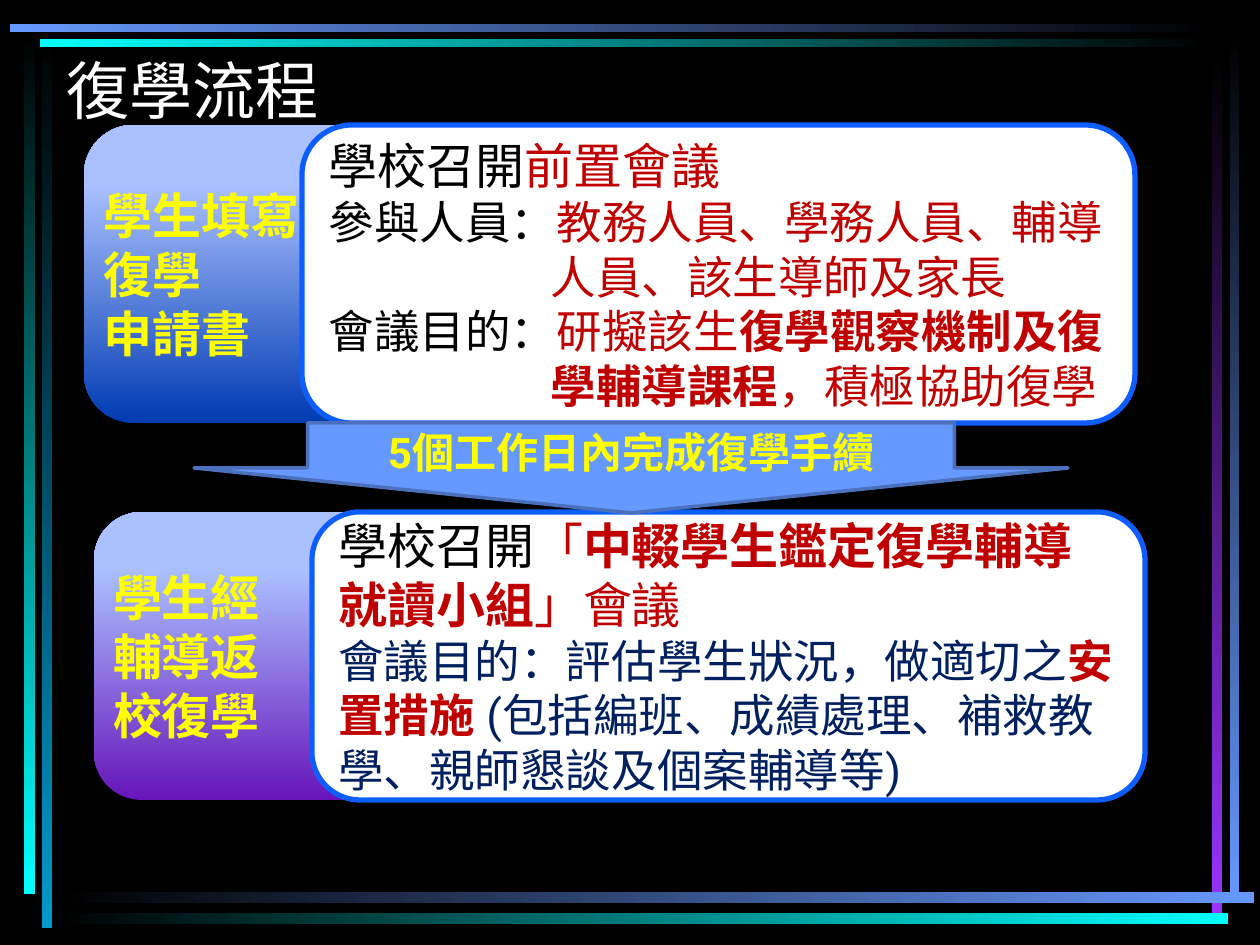
from dataclasses import dataclass

from lxml import etree
from pptx import Presentation
from pptx.dml.color import RGBColor
from pptx.enum.shapes import MSO_SHAPE
from pptx.enum.text import MSO_ANCHOR, PP_ALIGN
from pptx.oxml.ns import qn
from pptx.util import Pt

RECT = MSO_SHAPE.RECTANGLE
ROUNDED = MSO_SHAPE.ROUNDED_RECTANGLE
DOWN_ARROW = MSO_SHAPE.DOWN_ARROW
TOP, MIDDLE = MSO_ANCHOR.TOP, MSO_ANCHOR.MIDDLE
LEFT, CENTER = PP_ALIGN.LEFT, PP_ALIGN.CENTER
RIGHTWARD, UPWARD, DOWNWARD = 0, 90, 270


def px(length):
    return round(length * 914400 / 126)


@dataclass(frozen=True)
class Theme:
    font: str = "Roboto"
    black: str = "000000"
    white: str = "FFFFFF"
    yellow: str = "FFFF00"
    red: str = "C00000"
    navy: str = "002060"
    sky: str = "6699FF"
    aqua: str = "00FFFF"
    teal: str = "0099CC"
    violet: str = "9933FF"
    pale: str = "AAC0FF"
    blue: str = "003BB2"
    purple: str = "6715BA"
    card_line: str = "0D5DFF"
    arrow_line: str = "4B71BD"
    title: int = 36
    lead: int = 28
    body: int = 26
    note: int = 24


class Board:
    def __init__(self, theme, slide):
        self.theme = theme
        self.slide = slide
        slide.background.fill.solid()
        slide.background.fill.fore_color.rgb = RGBColor.from_string(theme.black)

    def shape(self, kind, box, line=None, width=0):
        shape = self.slide.shapes.add_shape(kind, *map(px, box))
        shape.shadow.inherit = False
        if line:
            shape.line.color.rgb = RGBColor.from_string(line)
            shape.line.width = Pt(width)
        else:
            shape.line.fill.background()
        return shape

    def solid(self, shape, color):
        shape.fill.solid()
        shape.fill.fore_color.rgb = RGBColor.from_string(color)

    def gradient(self, shape, colors, angle, end=1.0):
        shape.fill.gradient()
        shape.fill.gradient_angle = angle
        for stop, color, position in zip(shape.fill.gradient_stops, colors, (0, end)):
            stop.color.rgb = RGBColor.from_string(color)
            stop.position = position

    def bar(self, box, colors, angle):
        self.gradient(self.shape(RECT, box), colors, angle)

    def text(self, holder, paragraphs, anchor=MIDDLE, align=LEFT, inset=None):
        frame = holder.text_frame
        frame.word_wrap = True
        frame.vertical_anchor = anchor
        if inset is not None:
            frame.margin_left = frame.margin_right = px(inset)
            frame.margin_top = frame.margin_bottom = px(inset)
        for index, (hang, runs) in enumerate(paragraphs):
            paragraph = frame.add_paragraph() if index else frame.paragraphs[0]
            paragraph.alignment = align
            if hang:
                properties = paragraph._p.get_or_add_pPr()
                properties.set("marL", str(px(hang)))
                properties.set("indent", str(-px(hang)))
            for words, size, color, bold in runs:
                self.run(paragraph, words, size, color, bold)

    def run(self, paragraph, words, size, color, bold):
        run = paragraph.add_run()
        run.text = words
        run.font.size = Pt(size)
        run.font.bold = bold
        run.font.color.rgb = RGBColor.from_string(color)
        run.font.name = self.theme.font
        east_asian = etree.SubElement(run._r.get_or_add_rPr(), qn("a:ea"))
        east_asian.set("typeface", self.theme.font)

    def title(self, box, words):
        heading = self.slide.shapes.add_textbox(*map(px, box))
        self.text(heading, [(0, [(words, self.theme.title, self.theme.white, False)])], TOP)

    def stage(self, left, top, height, base, label, details):
        theme = self.theme
        tab = self.shape(ROUNDED, (left, top, 297, height))
        self.gradient(tab, (base, theme.pale), UPWARD, 0.8)
        lines = [(0, [(words, theme.lead, theme.yellow, True)]) for words in label]
        self.text(tab, lines, inset=5)
        card = self.shape(ROUNDED, (left + 218, top, 833, height), theme.card_line, 3)
        self.solid(card, theme.white)
        self.text(card, details)

    def arrow(self, box, words):
        theme = self.theme
        arrow = self.shape(DOWN_ARROW, box, theme.arrow_line, 2)
        arrow.adjustments[0] = 0.74
        arrow.adjustments[1] = 0.5
        self.solid(arrow, theme.sky)
        self.text(arrow, [(0, [(words, theme.note, theme.yellow, True)])], align=CENTER)


def main():
    deck = Presentation()
    deck.slide_width, deck.slide_height = px(1260), px(945)
    theme = Theme()
    board = Board(theme, deck.slides.add_slide(deck.slide_layouts[6]))

    for box, color in (
        ((42, 35, 10, 893), theme.teal),
        ((24, 32, 11, 862), theme.aqua),
        ((1230, 30, 9, 873), theme.sky),
        ((1212, 53, 10, 860), theme.violet),
    ):
        board.bar(box, (theme.black, color), DOWNWARD)
    for box, colors in (
        ((57, 892, 1197, 11), (theme.black, theme.sky)),
        ((52, 913, 1176, 11), (theme.black, theme.aqua)),
        ((40, 39, 1174, 8), (theme.aqua, theme.black)),
        ((10, 24, 1205, 8), (theme.sky, theme.black)),
    ):
        board.bar(box, colors, RIGHTWARD)

    board.title((54, 45, 1103, 116), "復學流程")

    lead, body, hang = theme.lead, theme.body, 222
    black, red, navy = theme.black, theme.red, theme.navy
    board.stage(84, 125, 298, theme.blue, ("學生填寫", "復學", "申請書"), [
        (0, [("學校召開", lead, black, False), ("前置會議", lead, red, False)]),
        (hang, [
            ("參與人員：", body, black, False),
            ("教務人員、學務人員、輔導人員、該生導師及家長", body, red, False),
        ]),
        (hang, [
            ("會議目的：", body, black, False),
            ("研擬該生", body, red, False),
            ("復學觀察機制及復學輔導課程", body, red, True),
            ("，積極協助復學", body, red, False),
        ]),
    ])
    board.stage(94, 512, 288, theme.purple, ("學生經", "輔導返", "校復學"), [
        (0, [
            ("學校召開", lead, black, False),
            ("「", lead, red, False),
            ("中輟學生鑑定復學輔導就讀小組", lead, red, True),
            ("」會議", lead, red, False),
        ]),
        (0, [
            ("會議目的：評估學生狀況，做適切之", body, navy, False),
            ("安置措施 ", body, red, True),
            ("(包括編班、成績處理、補救教學、親師懇談及個案輔導等)", body, navy, False),
        ]),
    ])
    board.arrow((194, 423, 874, 90), "5個工作日內完成復學手續")

    deck.save("out.pptx")


if __name__ == "__main__":
    main()
